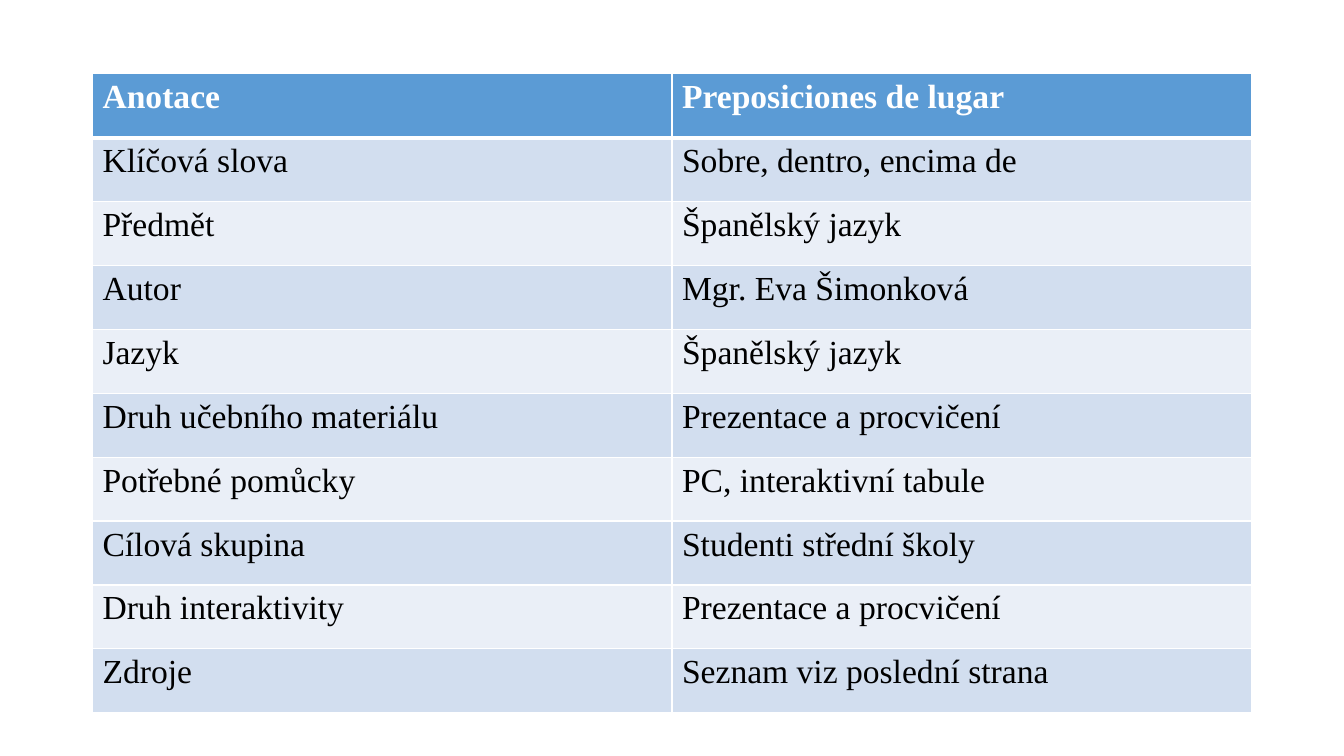
from lxml import etree
from pptx import Presentation
from pptx import util as u
from pptx.dml.color import RGBColor
from pptx.oxml import ns

WHITE = RGBColor(0xFF, 0xFF, 0xFF)
BLACK = RGBColor(0x00, 0x00, 0x00)
HEADER_BLUE = RGBColor(0x5B, 0x9B, 0xD5)
BAND_DARK = RGBColor(0xD2, 0xDE, 0xEF)
BAND_LIGHT = RGBColor(0xEA, 0xEF, 0xF7)

TEXT_FORMAT = {"name": "Times New Roman", "size": u.Pt(24)}
THIN, THICK = u.Pt(1), u.Pt(3)

ANNOTATION = [
    ("Anotace", "Preposiciones de lugar"),
    ("Klíčová slova", "Sobre, dentro, encima de"),
    ("Předmět", "Španělský jazyk"),
    ("Autor", "Mgr. Eva Šimonková"),
    ("Jazyk", "Španělský jazyk"),
    ("Druh učebního materiálu", "Prezentace a procvičení"),
    ("Potřebné pomůcky", "PC, interaktivní tabule"),
    ("Cílová skupina", "Studenti střední školy"),
    ("Druh interaktivity", "Prezentace a procvičení"),
    ("Zdroje", "Seznam viz poslední strana"),
]


def set_borders(cell, widths):
    """Draw white cell borders; widths maps side letters to line widths."""
    properties = cell._tc.get_or_add_tcPr()
    for side in "LRTB":
        line = etree.SubElement(properties, ns.qn(f"a:ln{side}"), w=str(widths[side]))
        fill = etree.SubElement(line, ns.qn("a:solidFill"))
        etree.SubElement(fill, ns.qn("a:srgbClr"), val=str(WHITE))


def format_cell(cell, words, row):
    header = row == 0
    # Borders, heavier between the header and the body
    set_borders(cell, {
        "L": THIN,
        "R": THIN,
        "T": THICK if row == 1 else THIN,
        "B": THICK if header else THIN,
    })
    # Banded fill
    cell.fill.solid()
    band = BAND_DARK if row % 2 else BAND_LIGHT
    cell.fill.fore_color.rgb = HEADER_BLUE if header else band
    # Text
    span = cell.text_frame.paragraphs[0].add_run()
    span.text = words
    for name, value in {**TEXT_FORMAT, "bold": header}.items():
        setattr(span.font, name, value)
    span.font.color.rgb = WHITE if header else BLACK


def add_annotation_table(page, left, top, width, height):
    rows, columns = len(ANNOTATION), len(ANNOTATION[0])
    table = page.shapes.add_table(rows, columns, left, top, width, height).table
    for row, entries in enumerate(ANNOTATION):
        for column, words in enumerate(entries):
            format_cell(table.cell(row, column), words, row)


def main():
    deck = Presentation()
    deck.slide_width, deck.slide_height = u.Cm(33.87), u.Cm(19.05)
    page = deck.slides.add_slide(deck.slide_layouts[6])
    add_annotation_table(page, u.Cm(2.33), u.Cm(1.86), u.Cm(29.21), u.Cm(16.1))
    deck.save("out.pptx")


if __name__ == "__main__":
    main()
